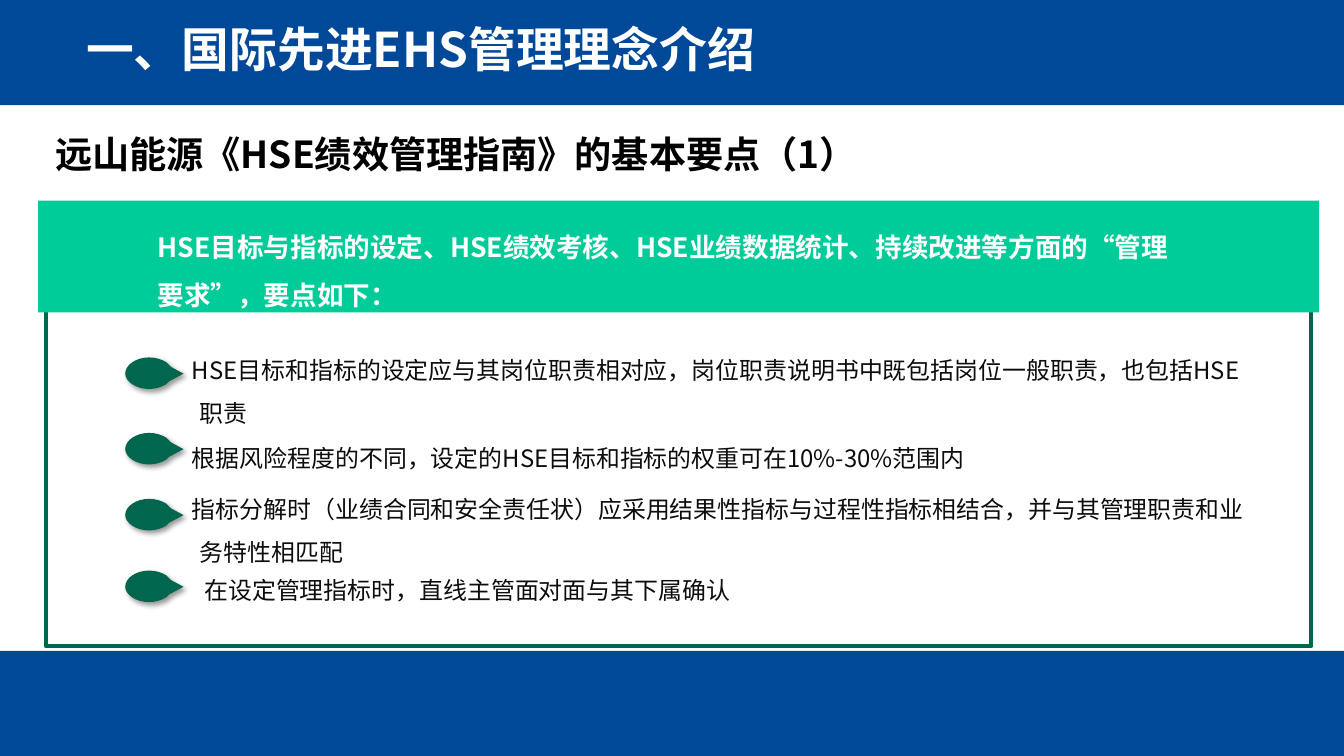
"""Build a slide on the key points of an HSE performance guide."""
from lxml import etree
from pptx import Presentation, util as u
from pptx.dml.color import RGBColor
from pptx.enum import shapes, text
from pptx.oxml.ns import qn

W, H, BAR = 14.06, 7.91, 1.1
FONT = "Noto Sans CJK SC"
BLUE, GREEN, MINT, WHITE, BLACK, INK = "004898", "00664D", "00CC99", "FFFFFF", "000000", "0D0D0D"
TITLE = "一、国际先进EHS管理理念介绍"
SUBTITLE = "远山能源《HSE绩效管理指南》的基本要点（1）"
LEAD = "HSE目标与指标的设定、HSE绩效考核、HSE业绩数据统计、持续改进等方面的“管理要求”，要点如下："
POINTS = [
    (3.74, (1.91, 3.52, 11.2, 0.87), 1.5,
     "HSE目标和指标的设定应与其岗位职责相对应，岗位职责说明书中既包括岗位一般职责，也包括HSE职责"),
    (4.53, (1.91, 4.44, 11.43, 0.53), 1.5,
     "根据风险程度的不同，设定的HSE目标和指标的权重可在10%-30%范围内"),
    (5.22, (1.91, 4.98, 11.31, 0.94), 1.5,
     "指标分解时（业绩合同和安全责任状）应采用结果性指标与过程性指标相结合，并与其管理职责和业务特性相匹配"),
    (5.97, (2.04, 5.97, 11.76, 0.4), None,
     "在设定管理指标时，直线主管面对面与其下属确认"),
]
DROP_X, DROP_START = 1.31, (0.25, 0)
DROP_SEGMENTS = [
    [(0.32, 0), (0.38, 0.02), (0.43, 0.05)],
    [(0.48, 0.1)],
    [(0.61, 0.17)],
    [(0.46, 0.25)],
    [(0.43, 0.28)],
    [(0.38, 0.31), (0.32, 0.33), (0.25, 0.33)],
    [(0.11, 0.33), (0, 0.25), (0, 0.17)],
    [(0, 0.08), (0.11, 0), DROP_START],
]


def rgb(value):
    return RGBColor.from_string(value)


def paint(sp, fill=None, line=None, width=0):
    sp.shadow.inherit = False
    if fill:
        sp.fill.solid()
        sp.fill.fore_color.rgb = rgb(fill)
    else:
        sp.fill.background()
    if line:
        sp.line.color.rgb = rgb(line)
        sp.line.width = u.Pt(width)
    else:
        sp.line.fill.background()


def rect(s, box, **style):
    sp = s.shapes.add_shape(shapes.MSO_SHAPE.RECTANGLE, *map(u.Inches, box))
    paint(sp, **style)
    return sp


def write(sp, words, size, color, bold=False, spacing=None):
    tf = sp.text_frame
    tf.word_wrap = True
    tf.vertical_anchor = text.MSO_ANCHOR.TOP
    p = tf.paragraphs[0]
    p.text = words
    p.alignment = text.PP_ALIGN.LEFT
    if spacing:
        p.line_spacing = spacing
    p.font.size, p.font.bold, p.font.name = u.Pt(size), bold, FONT
    p.font.color.rgb = rgb(color)
    rpr = p._p.pPr.find(qn("a:defRPr"))
    etree.SubElement(rpr, qn("a:ea")).set("typeface", FONT)
    return p


def label(s, box, *args, **style):
    return write(s.shapes.add_textbox(*map(u.Inches, box)), *args, **style)


def drop(s, top):
    def place(point):
        return u.Inches(DROP_X + point[0]), u.Inches(top + point[1])

    fb = s.shapes.build_freeform(*place(DROP_START))
    fb.add_line_segments([place(pt) for seg in DROP_SEGMENTS for pt in seg], close=True)
    sp = fb.convert_to_shape()
    lines = iter(list(sp.element.iter(qn("a:lnTo"))))
    for segment in DROP_SEGMENTS:
        parts = [next(lines) for _ in segment]
        if len(parts) == 3:
            curve = etree.Element(qn("a:cubicBezTo"))
            parts[0].addprevious(curve)
            for part in parts:
                curve.append(part[0])
                part.getparent().remove(part)

    paint(sp, fill=GREEN)
    effects = sp.element.spPr.find(qn("a:effectLst"))
    shadow = etree.SubElement(effects, qn("a:outerShdw"), blurRad=str(u.Pt(4)),
                              dist=str(u.Pt(3)), dir="2700000", algn="tl", rotWithShape="0")
    color = etree.SubElement(shadow, qn("a:srgbClr"), val=BLACK)
    etree.SubElement(color, qn("a:alpha"), val="40000")


def main():
    prs = Presentation()
    prs.slide_width, prs.slide_height = u.Inches(W), u.Inches(H)
    s = prs.slides.add_slide(prs.slide_layouts[5])

    title = s.shapes.title
    title.left, title.top, title.width, title.height = map(u.Inches, (0.8, 0.16, 7.86, 0.71))
    write(title, TITLE, 36, WHITE, bold=True)
    title.text_frame.auto_size = text.MSO_AUTO_SIZE.SHAPE_TO_FIT_TEXT
    for top in (H - BAR, 0):
        bar = rect(s, (0, top, W, BAR), fill=BLUE)
        title.element.addprevious(bar.element)

    rect(s, (0.48, 3.19, 13.24, 3.57), line=GREEN, width=3)
    rect(s, (0.4, 2.1, 13.4, 1.17), fill=MINT)
    label(s, (1.55, 2.2, 10.87, 1.11), LEAD, 20, WHITE, bold=True, spacing=1.5)
    label(s, (0.48, 1.32, 11.47, 0.54), SUBTITLE, 28, BLACK, bold=True)
    for top, box, spacing, words in POINTS:
        drop(s, top)
        p = label(s, box, words, 18, INK, spacing=spacing)
        if spacing:
            ppr = p._p.pPr
            ppr.set("marL", str(u.Inches(0.08)))
            ppr.set("indent", str(u.Inches(-0.2)))
    prs.save("out.pptx")


if __name__ == "__main__":
    main()
